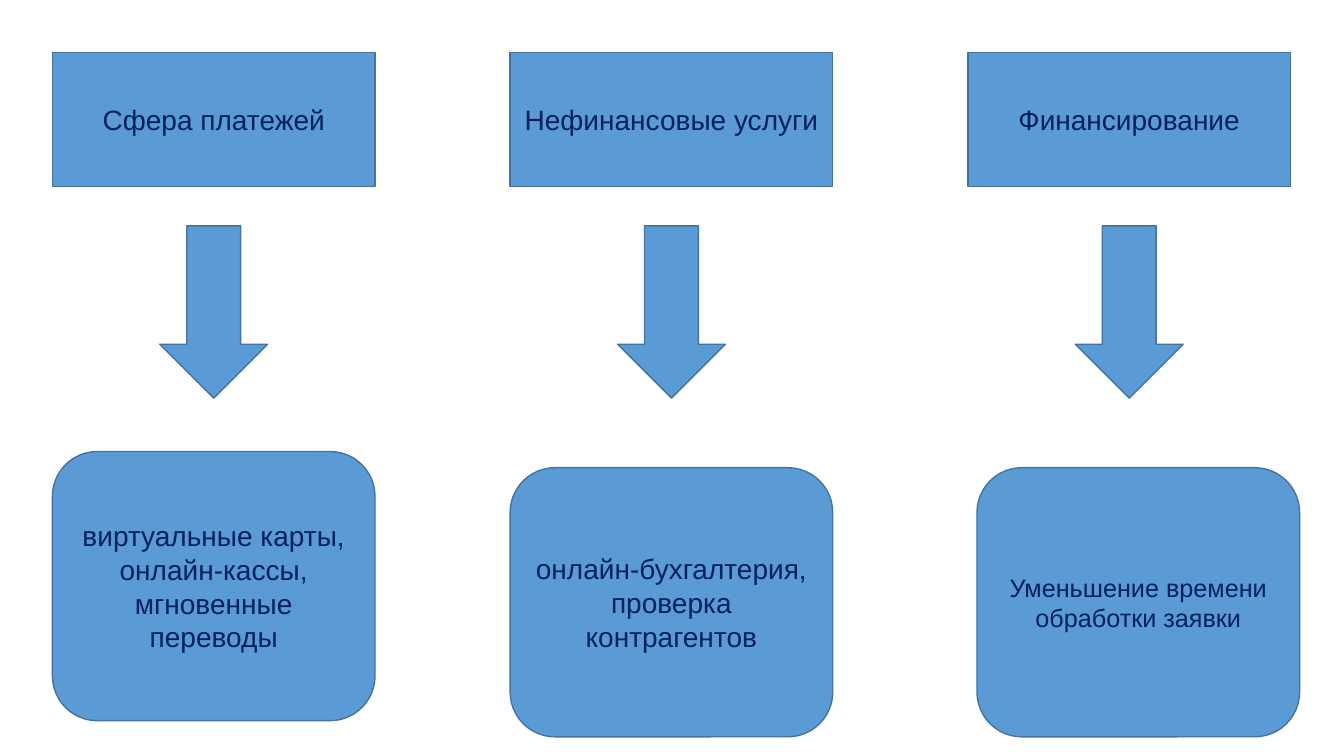
from pptx import Presentation
from pptx.dml.color import RGBColor
from pptx.enum.shapes import MSO_SHAPE
from pptx.enum.text import MSO_ANCHOR, PP_ALIGN
from pptx.util import Inches, Pt

BLUE = RGBColor(0x5B, 0x9B, 0xD5)
OUTLINE = RGBColor(0x43, 0x73, 0x9E)
NAVY = RGBColor(0x00, 0x20, 0x60)
WHITE = RGBColor(0xFF, 0xFF, 0xFF)

LEFT, TOP, COLUMN_STEP, BOX_WIDTH = 0.52, 0.52, 4.54, 3.2
HEADING_HEIGHT, DETAIL_HEIGHT = 1.33, 2.67
ARROW_DROP, ARROW_WIDTH, ARROW_HEIGHT = 1.72, 1.07, 1.71

# heading, detail, detail text size, detail shift to the right, detail drop
COLUMNS = [
    ("Сфера платежей", "виртуальные карты, онлайн-кассы, мгновенные переводы", 20, 0, 3.96),
    ("Нефинансовые услуги", "онлайн-бухгалтерия, проверка контрагентов", 20, 0, 4.12),
    ("Финансирование", "Уменьшение времени обработки заявки", 18, 0.09, 4.12),
]


def add_block(slide, kind, left, top, width, height):
    block = slide.shapes.add_shape(
        kind, Inches(left), Inches(top), Inches(width), Inches(height))
    block.shadow.inherit = False
    block.fill.solid()
    block.fill.fore_color.rgb = BLUE
    block.line.color.rgb = OUTLINE
    block.line.width = Pt(1)
    return block


def write_text(block, text, size):
    frame = block.text_frame
    frame.text = text
    frame.word_wrap = True
    frame.vertical_anchor = MSO_ANCHOR.MIDDLE
    para = frame.paragraphs[0]
    para.alignment = PP_ALIGN.CENTER
    font = para.runs[0].font
    font.name = "Arial"
    font.size = Pt(size)
    font.color.rgb = NAVY


def add_column(slide, left, top, width, heading, detail, detail_size, shift, drop):
    """Place a heading, an arrow below it and the rounded detail box."""
    heading_box = add_block(slide, MSO_SHAPE.RECTANGLE, left, top, width, HEADING_HEIGHT)
    write_text(heading_box, heading, 20)
    add_block(slide, MSO_SHAPE.DOWN_ARROW, left + (width - ARROW_WIDTH) / 2,
              top + ARROW_DROP, ARROW_WIDTH, ARROW_HEIGHT)
    detail_box = add_block(slide, MSO_SHAPE.ROUNDED_RECTANGLE, left + shift,
                           top + drop, width, DETAIL_HEIGHT)
    write_text(detail_box, detail, detail_size)


def main():
    deck = Presentation()
    deck.slide_width = Inches(13.33)
    deck.slide_height = Inches(7.5)
    slide = deck.slides.add_slide(deck.slide_layouts[6])
    slide.background.fill.solid()
    slide.background.fill.fore_color.rgb = WHITE
    for index, column in enumerate(COLUMNS):
        add_column(slide, LEFT + index * COLUMN_STEP, TOP, BOX_WIDTH, *column)
    deck.save("out.pptx")


if __name__ == "__main__":
    main()
